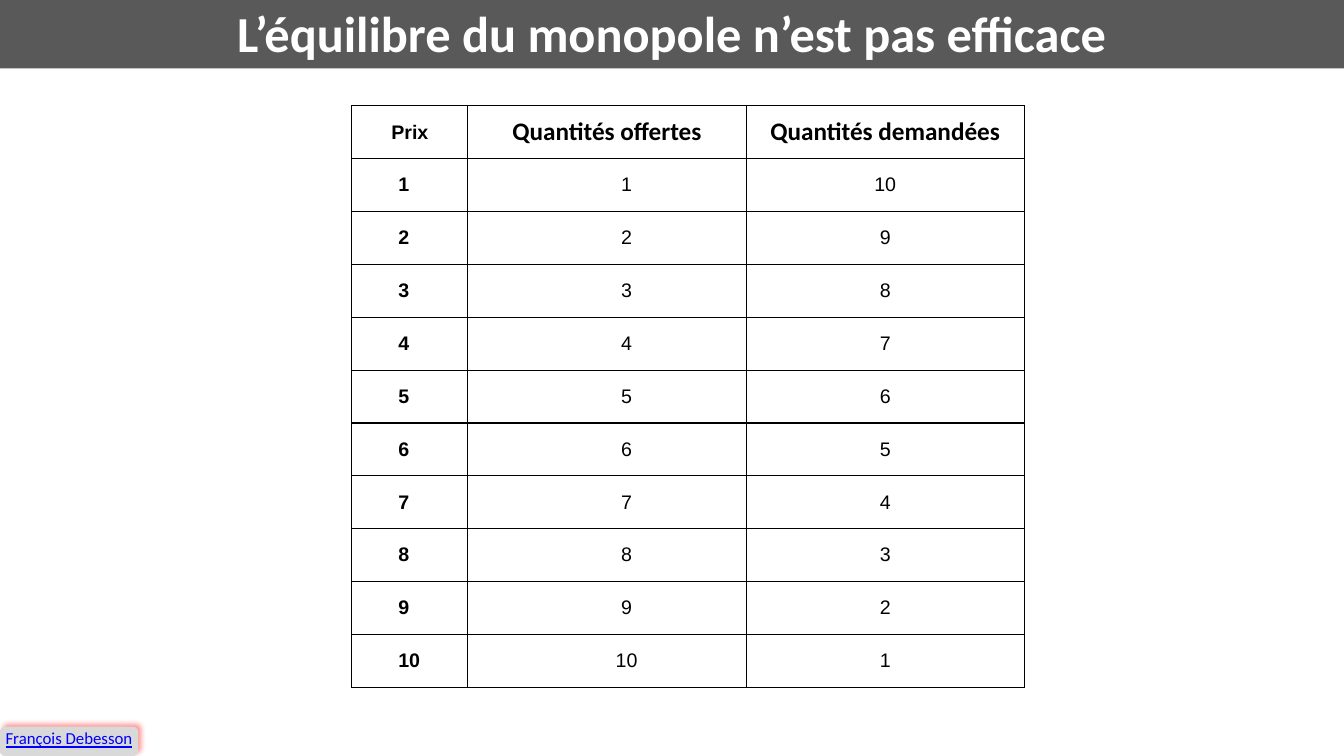
import dataclasses

import lxml.etree
import pptx
import pptx.dml.color
import pptx.enum.shapes
import pptx.enum.text
import pptx.oxml.ns
import pptx.util

Inches = pptx.util.Inches
ALIGN = pptx.enum.text.PP_ALIGN
MIDDLE = pptx.enum.text.MSO_ANCHOR.MIDDLE
HEX = {"band": "595959", "white": "FFFFFF", "black": "000000",
       "badge": "D9D9D9", "link": "0000FF", "glow": "FF0000"}


@dataclasses.dataclass
class Style:
    font: str
    size: int
    color: str = "black"
    bold: bool = False
    under: bool = False
    align: ALIGN = ALIGN.CENTER
    indent: float = 0


@dataclasses.dataclass
class Column:
    head: str
    width: float
    values: list[int]
    top: Style
    body: Style


def paint(fill: pptx.dml.fill.FillFormat, color: str) -> None:
    fill.solid()
    fill.fore_color.rgb = pptx.dml.color.RGBColor.from_string(HEX[color])


def write(frame: pptx.text.text.TextFrame, text: str, style: Style) -> None:
    frame.text = text
    para = frame.paragraphs[0]
    para.alignment = style.align
    if style.indent:
        props = para._p.get_or_add_pPr()
        props.set("marL", str(Inches(style.indent)))
        props.set("indent", "0")
    font = para.runs[0].font
    font.name, font.size = style.font, pptx.util.Pt(style.size)
    font.bold, font.underline = style.bold, style.under
    paint(font.fill, style.color)


def inset(frame: pptx.text.text.TextFrame, gap: float) -> None:
    frame.margin_left = frame.margin_right = Inches(gap)
    frame.margin_top = frame.margin_bottom = Inches(gap)


def node(parent: lxml.etree._Element, tag: str, **attrs: str) -> lxml.etree._Element:
    child = lxml.etree.SubElement(parent, pptx.oxml.ns.qn(f"a:{tag}"))
    for name, value in attrs.items():
        child.set(name, value)
    return child


def border(cell: pptx.table._Cell) -> None:
    props = cell._tc.get_or_add_tcPr()
    for side in ("lnL", "lnR", "lnT", "lnB"):
        line = node(props, side, w=str(pptx.util.Pt(1)))
        node(node(line, "solidFill"), "srgbClr", val=HEX["black"])


def fill_cell(cell: pptx.table._Cell, text: str, style: Style) -> None:
    write(cell.text_frame, text, style)
    cell.vertical_anchor = MIDDLE
    cell.margin_left = cell.margin_right = Inches(0.07)
    cell.margin_top = cell.margin_bottom = 0
    border(cell)
    cell.fill.background()


def add_title(slide: pptx.slide.Slide) -> None:
    title = slide.shapes.title
    title.left, title.top = Inches(0), Inches(-0.03)
    title.width, title.height = Inches(13.33), Inches(0.71)
    paint(title.fill, "band")
    frame = title.text_frame
    inset(frame, 0.04)
    frame.vertical_anchor = MIDDLE
    frame.auto_size = pptx.enum.text.MSO_AUTO_SIZE.NONE
    write(frame, "L’équilibre du monopole n’est pas efficace",
          Style("Calibri", 36, "white", bold=True))


def add_grid(slide: pptx.slide.Slide, columns: list[Column]) -> None:
    count = len(columns[0].values) + 1
    width = sum(col.width for col in columns)
    table = slide.shapes.add_table(
        count, len(columns), Inches(3.49), Inches(1.05),
        Inches(width), Inches(5.77)).table
    table.first_row = table.horz_banding = False
    for x, col in enumerate(columns):
        table.columns[x].width = Inches(col.width)
        fill_cell(table.cell(0, x), col.head, col.top)
        for y, value in enumerate(col.values, 1):
            fill_cell(table.cell(y, x), str(value), col.body)


def add_badge(slide: pptx.slide.Slide) -> None:
    badge = slide.shapes.add_shape(
        pptx.enum.shapes.MSO_SHAPE.ROUNDED_RECTANGLE,
        Inches(0), Inches(7.21), Inches(1.37), Inches(0.29))
    paint(badge.fill, "badge")
    badge.line.fill.background()
    badge.shadow.inherit = False
    # Red outer shadow towards the upper right
    effects = badge._element.spPr.find(pptx.oxml.ns.qn("a:effectLst"))
    shadow = node(effects, "outerShdw", blurRad=str(pptx.util.Pt(4)),
                  dist=str(pptx.util.Pt(3)), dir=str(315 * 60000),
                  algn="bl", rotWithShape="0")
    node(node(shadow, "srgbClr", val=HEX["glow"]), "alpha", val="40000")
    frame = badge.text_frame
    inset(frame, 0)
    frame.vertical_anchor = pptx.enum.text.MSO_ANCHOR.TOP
    write(frame, "François Debesson", Style("Calibri", 12, "link", under=True))


def main() -> None:
    deck = pptx.Presentation()
    deck.slide_width, deck.slide_height = Inches(13.33), Inches(7.5)
    slide = deck.slides.add_slide(deck.slide_layouts[5])

    # Supply rises with price while demand falls
    rising = list(range(1, 11))
    falling = rising[::-1]
    head = Style("Calibri", 18, bold=True)
    columns = [
        Column("Prix", 1.15, rising, Style("Arial", 14, bold=True),
               Style("Arial", 14, bold=True, align=ALIGN.LEFT, indent=0.39)),
        Column("Quantités offertes", 2.76, rising, head,
               Style("Arial", 14, indent=0.39)),
        Column("Quantités demandées", 2.76, falling, head, Style("Arial", 14)),
    ]

    add_title(slide)
    add_grid(slide, columns)
    add_badge(slide)
    deck.save("out.pptx")


if __name__ == "__main__":
    main()
